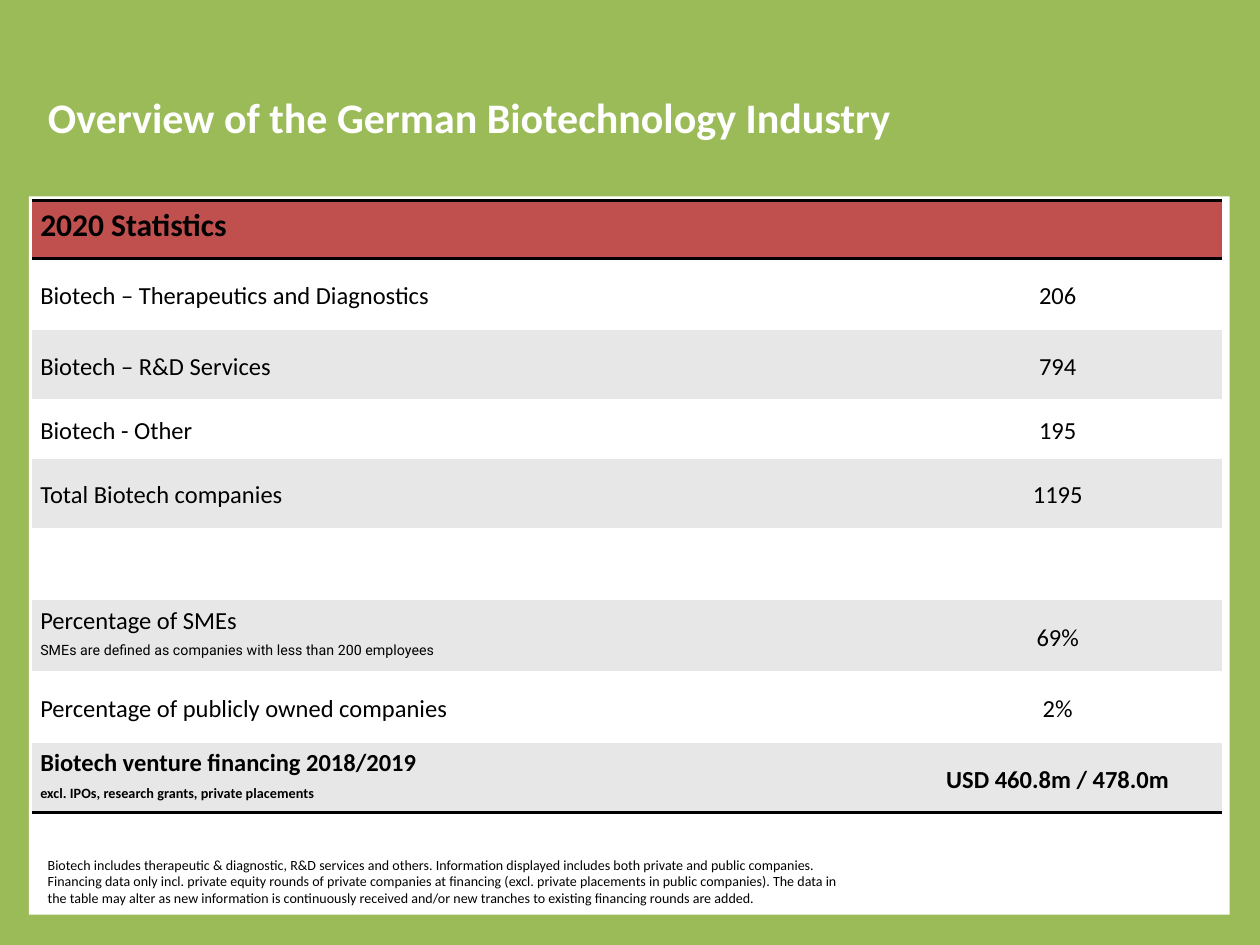
from lxml.etree import SubElement
from pptx import Presentation
from pptx.dml.color import RGBColor
from pptx.enum.shapes import MSO_SHAPE as Shape
from pptx.enum.text import MSO_ANCHOR as Anchor, PP_ALIGN as Align
from pptx.oxml.ns import qn
from pptx.util import Inches, Pt

BLACK, WHITE, GREY = "000000", "FFFFFF", "E7E7E7"
GREEN, RED = "9BBB59", "C0504D"
NO_STYLE = "{2D5ABB26-0587-4C30-8999-92F81FD0307C}"
COLUMN_WIDTHS = (6.84, 2.61)
ROWS = [
    (0.57, ["Biotech – Therapeutics and Diagnostics"], "206"),
    (0.55, ["Biotech – R&D Services"], "794"),
    (0.47, ["Biotech - Other"], "195"),
    (0.55, ["Total Biotech companies"], "1195"),
    (0.57, [], ""),
    (0.57, ["Percentage of SMEs",
            "SMEs are defined as companies with less than 200 employees"], "69%"),
    (0.57, ["Percentage of publicly owned companies"], "2%"),
    (0.55, ["Biotech venture financing 2018/2019",
            "excl. IPOs, research grants, private placements"], "USD 460.8m / 478.0m"),
]
FOOTNOTE = (
    "Biotech includes therapeutic & diagnostic, R&D services and others. "
    "Information displayed includes both private and public companies. "
    "Financing data only incl. private equity rounds of private companies at financing "
    "(excl. private placements in public companies). The data in the table may alter as "
    "new information is continuously received and/or new tranches to existing financing "
    "rounds are added."
)


def paint(fill, color):
    """Make a fill solid in the given hex colour."""
    fill.solid()
    fill.fore_color.rgb = RGBColor.from_string(color)


def add_run(paragraph, text, color=BLACK, raised=False, **formats):
    """Add a formatted run, raised as superscript on request."""
    run = paragraph.add_run()
    run.text = text
    for name, value in {"name": "Calibri", "bold": False, **formats}.items():
        setattr(run.font, name, value)
    run.font.color.rgb = RGBColor.from_string(color)
    if raised:
        run._r.get_or_add_rPr().set("baseline", "30000")


def add_border(cell, side, width):
    """Draw a black border on one side of a cell."""
    properties = cell._tc.get_or_add_tcPr()
    line = SubElement(properties, qn(f"a:{side}"), w=str(Pt(width)))
    SubElement(SubElement(line, qn("a:solidFill")), qn("a:srgbClr"), val=BLACK)


def fill_cell(cell, lines, color, anchor=Anchor.MIDDLE, align=Align.LEFT,
              note_font="Calibri", **formats):
    """Fill a cell with a main line and an optional raised note."""
    paint(cell.fill, color)
    margins = {"margin_left": 0.07, "margin_right": 0.07, "margin_top": 0, "margin_bottom": 0}
    for name, value in margins.items():
        setattr(cell, name, Inches(value))
    cell.vertical_anchor = anchor
    for index, text in enumerate(lines):
        frame = cell.text_frame
        paragraph = frame.add_paragraph() if index else frame.paragraphs[0]
        paragraph.alignment, paragraph.line_spacing = align, 1.15
        font = note_font if index else "Calibri"
        add_run(paragraph, text, raised=index > 0, name=font, **formats)


def add_panel(slide, box):
    """Place the white panel behind the table."""
    panel = slide.shapes.add_shape(Shape.RECTANGLE, *map(Inches, box))
    panel.shadow.inherit = False
    paint(panel.fill, WHITE)
    panel.line.fill.background()


def add_title(slide, box, text):
    """Move the title placeholder and set its text."""
    title = slide.shapes.title
    title.left, title.top, title.width, title.height = map(Inches, box)
    title.text_frame.vertical_anchor = Anchor.MIDDLE
    paragraph = title.text_frame.paragraphs[0]
    paragraph.alignment = Align.LEFT
    add_run(paragraph, text, WHITE, size=Pt(24), bold=True)


def add_statistics(slide, box):
    """Build the statistics table with its merged header."""
    frame = slide.shapes.add_table(len(ROWS) + 1, len(COLUMN_WIDTHS), *map(Inches, box))
    table = frame.table
    table.first_row = table.horz_banding = False
    table._tbl.tblPr.find(qn("a:tableStyleId")).text = NO_STYLE
    for column, width in zip(table.columns, COLUMN_WIDTHS):
        column.width = Inches(width)
    table.rows[0].height = Inches(0.46)
    for cell in table.rows[0].cells:
        add_border(cell, "lnT", 2)
        add_border(cell, "lnB", 2)
    header = table.cell(0, 0)
    header.merge(table.cell(0, 1))
    fill_cell(header, ["2020 Statistics"], RED, Anchor.TOP, size=Pt(18), bold=True)
    for index, (height, label, value) in enumerate(ROWS, 1):
        row = table.rows[index]
        row.height = Inches(height)
        last = index == len(ROWS)
        color = WHITE if index % 2 else GREY
        formats = {"size": Pt(14), "bold": last}
        if last:
            for cell in row.cells:
                add_border(cell, "lnB", 1.5)
        note_font = "Calibri" if last else "Roboto"
        fill_cell(row.cells[0], label, color, note_font=note_font, **formats)
        fill_cell(row.cells[1], [value] if value else [], color, align=Align.CENTER, **formats)


def add_footnote(slide, box):
    """Place the explanatory note under the table."""
    frame = slide.shapes.add_textbox(*map(Inches, box)).text_frame
    frame.word_wrap = True
    frame.vertical_anchor = Anchor.MIDDLE
    add_run(frame.paragraphs[0], FOOTNOTE, size=Pt(8))


def main():
    """Build and save the slide."""
    presentation = Presentation()
    presentation.slide_width, presentation.slide_height = Inches(10), Inches(7.5)
    slide = presentation.slides.add_slide(presentation.slide_layouts[5])
    paint(slide.background.fill, GREEN)
    add_panel(slide, (0.23, 1.56, 9.53, 5.7))
    add_title(slide, (0.28, 0.3, 9, 1.25), "Overview of the German Biotechnology Industry")
    add_statistics(slide, (0.25, 1.59, 9.45, 4.86))
    add_footnote(slide, (0.28, 6.66, 6.61, 0.67))
    presentation.save("out.pptx")


if __name__ == "__main__":
    main()
